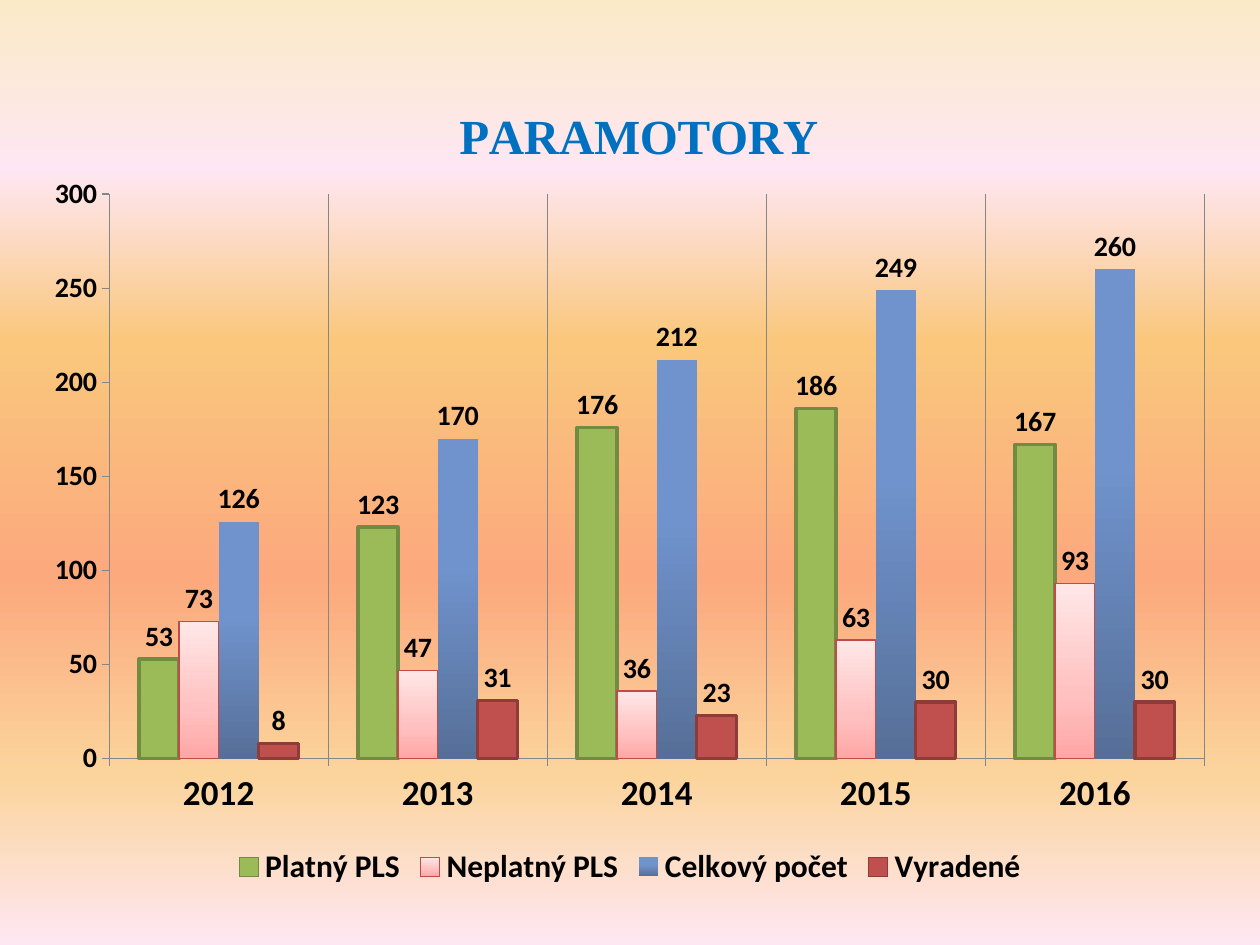
import pptx
import pptx.chart.data
import pptx.dml.color
import pptx.enum.chart
import pptx.oxml
import pptx.util
from pptx.oxml.ns import nsdecls, qn
from pptx.util import Inches

# Content
TITLE = "PARAMOTORY"
YEARS = ["2012", "2013", "2014", "2015", "2016"]
SERIES = {
    "Platný PLS": [53, 123, 176, 186, 167],
    "Neplatný PLS": [73, 47, 36, 63, 93],
    "Celkový počet": [126, 170, 212, 249, 260],
    "Vyradené": [8, 31, 23, 30, 30],
}

# Theme: a fill is a colour or (angle, stops); a line is (colour, width)
THEME = {
    "body": "Calibri", "heading": "Times New Roman",
    "text": "000000", "title": "0070C0", "axis": "868686",
    "title_size": 28, "year_size": 20, "legend_size": 18, "value_size": 16,
    "background": (90, [(0, "FBEAC7"), (18, "FEE7F2"), (36, "FAC77D"),
                        (61, "FBA97D"), (82, "FBD49C"), (100, "FEE7F2")]),
    "bars": [
        ("9BBB59", ("738A42", 2)),
        ((270, [(0, "FFA6A5"), (35, "FFC0BF"), (100, "FFE7E7")]), ("BF4C48", 0.75)),
        ((270, [(0, "566F98"), (60, "7093CD"), (100, "7093CD")]), None),
        ("C0504D", ("8E3B39", 2)),
    ],
}


def rgb(color):
    return pptx.dml.color.RGBColor.from_string(color)


def format_font(font, size, color=THEME["text"], name=THEME["body"], bold=True):
    font.size, font.bold, font.name = pptx.util.Pt(size), bold, name
    font.color.rgb = rgb(color)


def add_text(tf, text, **style):
    r = tf.paragraphs[0].add_run()
    r.text = text
    format_font(r.font, **style)


def set_gradient(fill, owner, angle, stops):
    fill.gradient()
    fill.gradient_angle = 360 - angle
    stop_list = owner.xpath(".//a:gsLst")[0]
    for old in list(stop_list):
        stop_list.remove(old)
    for position, color in stops:
        stop_list.append(pptx.oxml.parse_xml(
            f'<a:gs {nsdecls("a")} pos="{position * 1000}"><a:srgbClr val="{color}"/></a:gs>'))


def set_line(line, color, width):
    line.color.rgb = rgb(color)
    line.width = pptx.util.Pt(width)


def set_layout(element, index, **values):
    for old in element.findall(qn("c:layout")):
        element.remove(old)
    items = "".join(f'<c:{key} val="{value}"/>' for key, value in values.items())
    element.insert(index, pptx.oxml.parse_xml(
        f'<c:layout {nsdecls("c")}><c:manualLayout>{items}</c:manualLayout></c:layout>'))


# Slide and background
prs = pptx.Presentation()
prs.slide_width, prs.slide_height = Inches(10), Inches(7.5)
s = prs.slides.add_slide(prs.slide_layouts.get_by_name("Blank"))
set_gradient(s.background.fill, s.element.xpath("./p:cSld/p:bg")[0], *THEME["background"])

# Chart
data = pptx.chart.data.CategoryChartData()
data.categories = YEARS
for name, values in SERIES.items():
    data.add_series(name, values)
chart = s.shapes.add_chart(pptx.enum.chart.XL_CHART_TYPE.COLUMN_CLUSTERED, Inches(0.25),
                           Inches(0.43), Inches(9.5), Inches(6.65), data).chart
format_font(chart.font, THEME["legend_size"], bold=False)
set_layout(chart.element.chart.plotArea, 0, layoutTarget="inner", xMode="edge", yMode="edge",
           x=0.065, y=0.167, w=0.915, h=0.674)

# Chart title
chart.has_title = True
add_text(chart.chart_title.text_frame, TITLE, size=THEME["title_size"],
         color=THEME["title"], name=THEME["heading"])
chart.chart_title.include_in_layout = False
set_layout(chart.chart_title.element, 1, xMode="edge", yMode="edge", x=0.35, y=0.05)

# Axes
for axis, size in ((chart.category_axis, THEME["year_size"]),
                   (chart.value_axis, THEME["value_size"])):
    format_font(axis.tick_labels.font, size)
    axis.major_tick_mark = pptx.enum.chart.XL_TICK_MARK.OUTSIDE
    set_line(axis.format.line, THEME["axis"], 0.75)
chart.value_axis.has_major_gridlines = False
chart.value_axis.minimum_scale = 0
chart.value_axis.maximum_scale = 300
chart.value_axis.major_unit = 50
chart.category_axis.has_major_gridlines = True
set_line(chart.category_axis.major_gridlines.format.line, THEME["axis"], 0.75)

# Columns and their labels
plot = chart.plots[0]
plot.gap_width, plot.overlap, plot.vary_by_categories = 150, 0, False
for series, (fill, line) in zip(plot.series, THEME["bars"]):
    series.invert_if_negative = False
    if isinstance(fill, tuple):
        set_gradient(series.format.fill, series.format.element
                     if hasattr(series.format, "element") else series._element, *fill)
    else:
        series.format.fill.solid()
        series.format.fill.fore_color.rgb = rgb(fill)
    if line:
        set_line(series.format.line, *line)
    else:
        series.format.line.fill.background()
    labels = series.data_labels
    labels.show_value = True
    labels.position = pptx.enum.chart.XL_LABEL_POSITION.OUTSIDE_END
    format_font(labels.font, THEME["value_size"])

# Legend
chart.has_legend = True
chart.legend.position = pptx.enum.chart.XL_LEGEND_POSITION.BOTTOM
chart.legend.include_in_layout = False
format_font(chart.legend.font, THEME["legend_size"])

prs.save("out.pptx")
